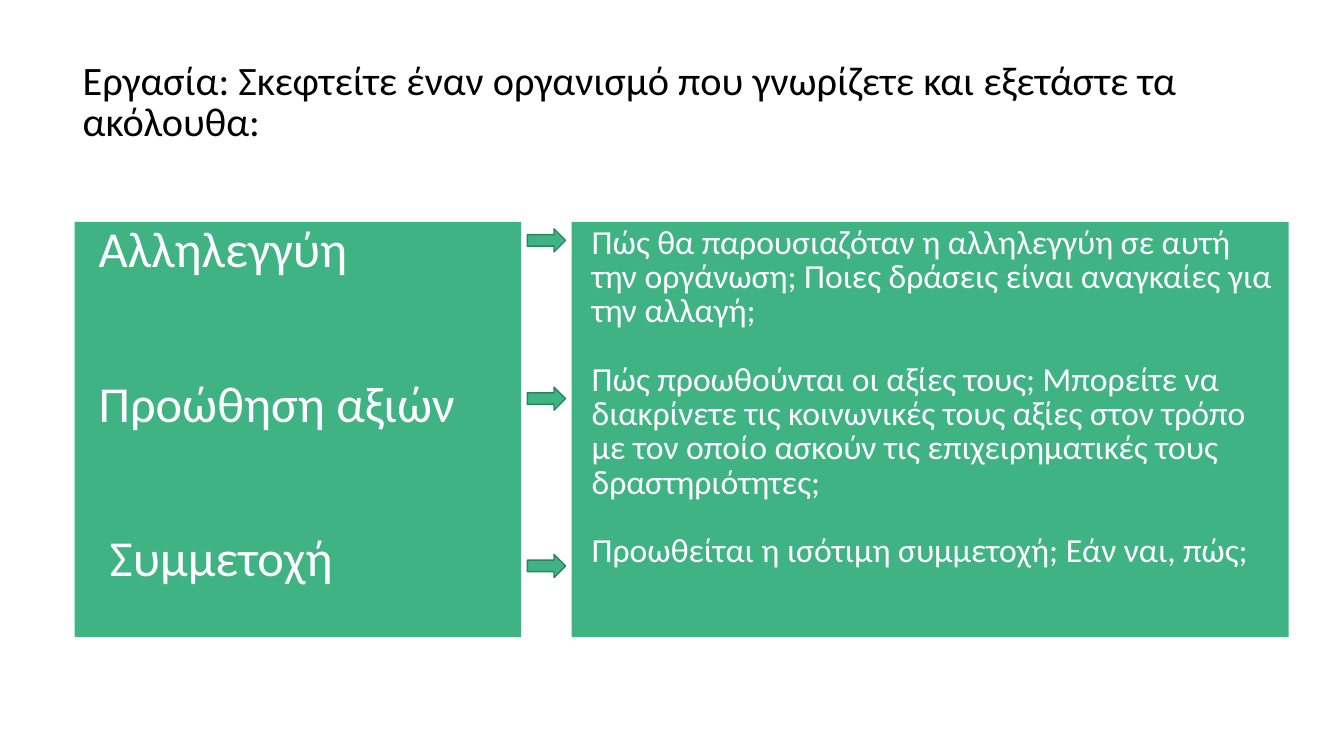
import pptx
import pptx.util
import pptx.dml.color
import pptx.enum.shapes
import pptx.enum.text

WIDE, HIGH = 13.33, 7.5
GREEN, EDGE, WHITE, BLACK = "40B385", "2E8261", "FFFFFF", "000000"

TITLE = "Εργασία: Σκεφτείτε έναν οργανισμό που γνωρίζετε και εξετάστε τα ακόλουθα:"
TITLE_BOX = (0.72, 0.55, 11.78, 0.96)
TOP, TALL = 2.2, 4.12
PANELS = [
    {"left": 0.74, "width": 4.43, "size": 36, "gap": 73.5, "lines": [
        ("Αλληλεγγύη", 0.14),
        ("Προώθηση αξιών", 0.14),
        ("Συμμετοχή", 0.25),
    ]},
    {"left": 5.67, "width": 7.11, "size": 24, "gap": 24.5, "lines": [
        ("Πώς θα παρουσιαζόταν η αλληλεγγύη σε αυτή την οργάνωση; "
         "Ποιες δράσεις είναι αναγκαίες για την αλλαγή;", 0.1),
        ("Πώς προωθούνται οι αξίες τους; Μπορείτε να διακρίνετε τις κοινωνικές "
         "τους αξίες στον τρόπο με τον οποίο ασκούν τις επιχειρηματικές τους "
         "δραστηριότητες;", 0.1),
        ("Προωθείται η ισότιμη συμμετοχή; Εάν ναι, πώς;", 0.1),
    ]},
]
ARROW_TOPS = [2.27, 3.84, 5.5]
ARROW_WIDE, ARROW_TALL = 0.38, 0.23

KINDS = pptx.enum.shapes.MSO_SHAPE
ANCHOR = pptx.enum.text.MSO_ANCHOR
LEFT = pptx.enum.text.PP_ALIGN.LEFT
inch, point = pptx.util.Inches, pptx.util.Pt


def paint(hue):
    return pptx.dml.color.RGBColor.from_string(hue)


def style(thing, form):
    for name, value in form.items():
        setattr(thing, name, value)


def frame(shape, anchor):
    style(shape.text_frame, {
        "word_wrap": True, "vertical_anchor": anchor,
        "auto_size": pptx.enum.text.MSO_AUTO_SIZE.NONE,
        "margin_left": inch(0.1), "margin_right": inch(0.1),
        "margin_top": inch(0.05), "margin_bottom": inch(0.05)})
    return shape.text_frame


def write(para, text, size, hue, gap=0):
    style(para, {"alignment": LEFT, "line_spacing": 0.85,
                 "space_before": point(gap), "space_after": point(0)})
    run = para.add_run()
    run.text = text
    style(run.font, {"name": "Calibri", "size": point(size)})
    run.font.color.rgb = paint(hue)


def block(slide, kind, *box):
    shape = slide.shapes.add_shape(kind, *map(inch, box))
    shape.shadow.inherit = False
    shape.fill.solid()
    shape.fill.fore_color.rgb = paint(GREEN)
    return shape


def panel(slide, data):
    shape = block(slide, KINDS.RECTANGLE, data["left"], TOP, data["width"], TALL)
    shape.line.fill.background()
    body = frame(shape, ANCHOR.TOP)
    for row, (text, indent) in enumerate(data["lines"]):
        para = body.add_paragraph() if row else body.paragraphs[0]
        write(para, text, data["size"], WHITE, data["gap"] if row else 0)
        para._p.get_or_add_pPr().set("marL", str(inch(indent)))


def main():
    deck = pptx.Presentation()
    style(deck, {"slide_width": inch(WIDE), "slide_height": inch(HIGH)})
    slide = deck.slides.add_slide(deck.slide_layouts[5])
    title = slide.shapes.title
    style(title, dict(zip(("left", "top", "width", "height"), map(inch, TITLE_BOX))))
    write(frame(title, ANCHOR.MIDDLE).paragraphs[0], TITLE, 28.8, BLACK)

    for data in PANELS:
        panel(slide, data)

    start = PANELS[0]["left"] + PANELS[0]["width"]
    left = (start + PANELS[1]["left"] - ARROW_WIDE) / 2
    for top in ARROW_TOPS:
        arrow = block(slide, KINDS.RIGHT_ARROW, left, top, ARROW_WIDE, ARROW_TALL)
        arrow.line.color.rgb = paint(EDGE)
        arrow.line.width = point(1)

    deck.save("out.pptx")


if __name__ == "__main__":
    main()
